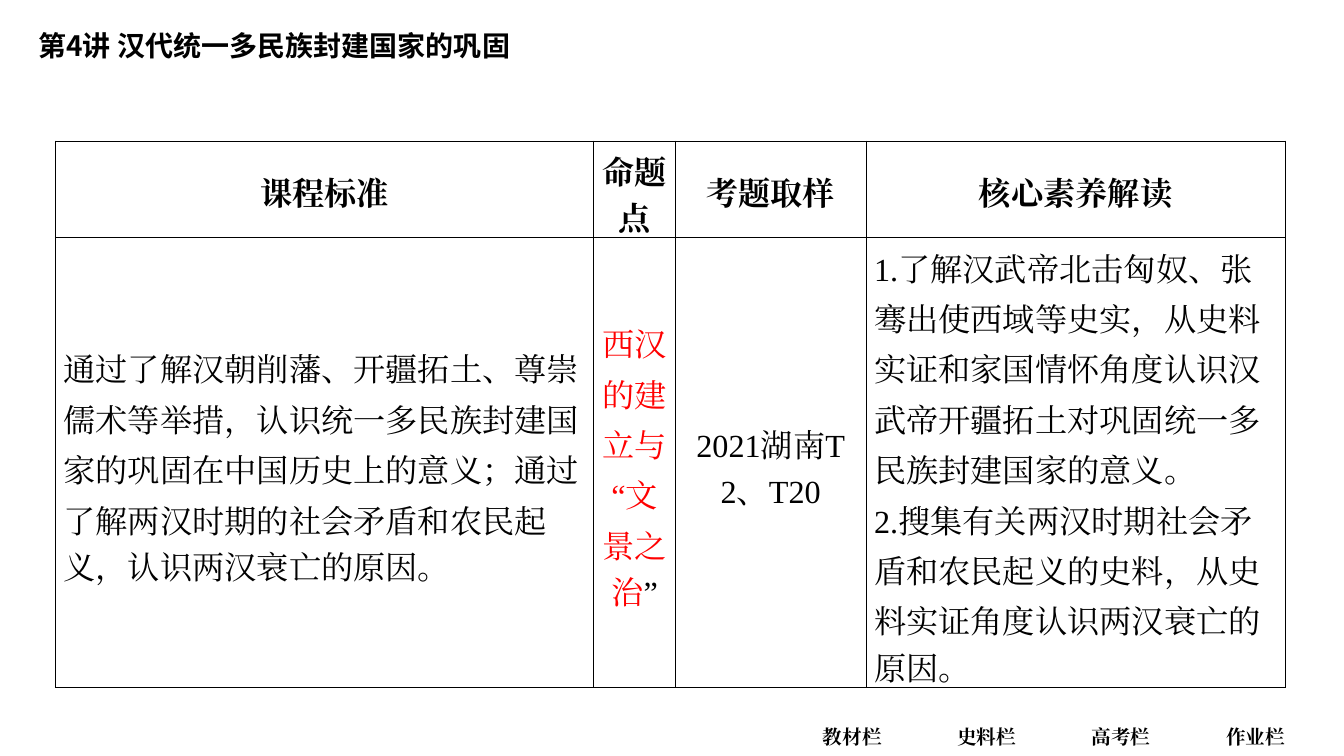
from lxml import etree
from pptx import Presentation
from pptx.dml.color import RGBColor
from pptx.enum.text import MSO_ANCHOR as ANCHOR, PP_ALIGN as ALIGN
from pptx.oxml.ns import qn
from pptx.util import Inches, Pt

SANS, SERIF = "Noto Sans CJK SC", "Times New Roman"
BLACK, RED = "000000", "FF0000"


def rgb(color):
    return RGBColor.from_string(color)


class SlideBuilder:
    """Holds the text style and the current slide."""

    def __init__(self, slide, table_size=23):
        self.slide = slide
        self.table_size = table_size

    def run(self, p, text, size, font=SERIF, color=BLACK, bold=False):
        r = p.add_run()
        r.text = text
        r.font.size, r.font.name, r.font.bold = Pt(size), font, bold
        r.font.color.rgb = rgb(color)
        ea = etree.SubElement(r._r.get_or_add_rPr(), qn("a:ea"))
        ea.set("typeface", font)

    def label(self, text, x, y, w, h, size, font=SERIF, align=ALIGN.LEFT):
        box = self.slide.shapes.add_textbox(
            Inches(x), Inches(y), Inches(w), Inches(h))
        tf = box.text_frame
        tf.word_wrap = True
        tf.vertical_anchor = ANCHOR.MIDDLE
        tf.margin_left = tf.margin_right = tf.margin_top = tf.margin_bottom = 0
        p = tf.paragraphs[0]
        p.alignment = align
        self.run(p, text, size, font, bold=True)

    def borders(self, cell):
        tc_pr = cell._tc.get_or_add_tcPr()
        for i, side in enumerate(("lnL", "lnR", "lnT", "lnB")):
            ln = etree.Element(qn(f"a:{side}"), w=str(Pt(0.75)))
            fill = etree.SubElement(ln, qn("a:solidFill"))
            etree.SubElement(fill, qn("a:srgbClr"), val=BLACK)
            tc_pr.insert(i, ln)

    def cell(self, cell, lines, align, bold, color):
        cell.fill.background()
        self.borders(cell)
        cell.vertical_anchor = ANCHOR.MIDDLE
        cell.margin_left = cell.margin_right = Inches(0.08)
        cell.margin_top = cell.margin_bottom = 0
        tf = cell.text_frame
        for i, line in enumerate(lines):
            p = tf.paragraphs[0] if i == 0 else tf.add_paragraph()
            p.alignment = align
            # The last line of every cell is set tighter
            p.line_spacing = Pt(33 if i == len(lines) - 1 else 36)
            # A closing quote stays black
            body = line.removesuffix("”")
            self.run(p, body, self.table_size, color=color, bold=bold)
            if body != line:
                self.run(p, "”", self.table_size, bold=bold)

    def table(self, x, y, widths, heights, rows, aligns, colors):
        frame = self.slide.shapes.add_table(
            len(rows), len(widths), Inches(x), Inches(y),
            Inches(sum(widths)), Inches(sum(heights)))
        tbl = frame.table
        for col, w in zip(tbl.columns, widths):
            col.width = Inches(w)
        for row, h in zip(tbl.rows, heights):
            row.height = Inches(h)
        for i, row in enumerate(rows):
            head = i == 0
            for j, lines in enumerate(row):
                self.cell(tbl.cell(i, j), lines,
                          ALIGN.CENTER if head else aligns[j], head,
                          BLACK if head else colors[j])


HEADER = [["课程标准"], ["命题", "点"], ["考题取样"], ["核心素养解读"]]
BODY = [
    ["通过了解汉朝削藩、开疆拓土、尊崇",
     "儒术等举措，认识统一多民族封建国",
     "家的巩固在中国历史上的意义；通过",
     "了解两汉时期的社会矛盾和农民起",
     "义，认识两汉衰亡的原因。"],
    ["西汉", "的建", "立与", "“文", "景之", "治”"],
    ["2021湖南T", "2、T20"],
    ["1.了解汉武帝北击匈奴、张",
     "骞出使西域等史实，从史料",
     "实证和家国情怀角度认识汉",
     "武帝开疆拓土对巩固统一多",
     "民族封建国家的意义。",
     "2.搜集有关两汉时期社会矛",
     "盾和农民起义的史料，从史",
     "料实证角度认识两汉衰亡的",
     "原因。"],
]


def main():
    prs = Presentation()
    prs.slide_width, prs.slide_height = Inches(13.33), Inches(7.5)
    s = SlideBuilder(prs.slides.add_slide(prs.slide_layouts[6]))

    # Title
    s.label("第4讲 汉代统一多民族封建国家的巩固", 0.38, 0.23, 11.09, 0.44, 20, SANS)

    # Footer tabs
    for i, name in enumerate(("教材栏", "史料栏", "高考栏", "作业栏")):
        s.label(name, 7.89 + i * 1.333, 7.15, 1.13, 0.32, 14,
                align=ALIGN.CENTER)

    # Syllabus table
    s.table(0.55, 1.4, (5.34, 0.81, 1.89, 4.16), (0.95, 4.44), (HEADER, BODY),
            aligns=(ALIGN.LEFT, ALIGN.CENTER, ALIGN.CENTER, ALIGN.LEFT),
            colors=(BLACK, RED, BLACK, BLACK))

    prs.save("out.pptx")


if __name__ == "__main__":
    main()
